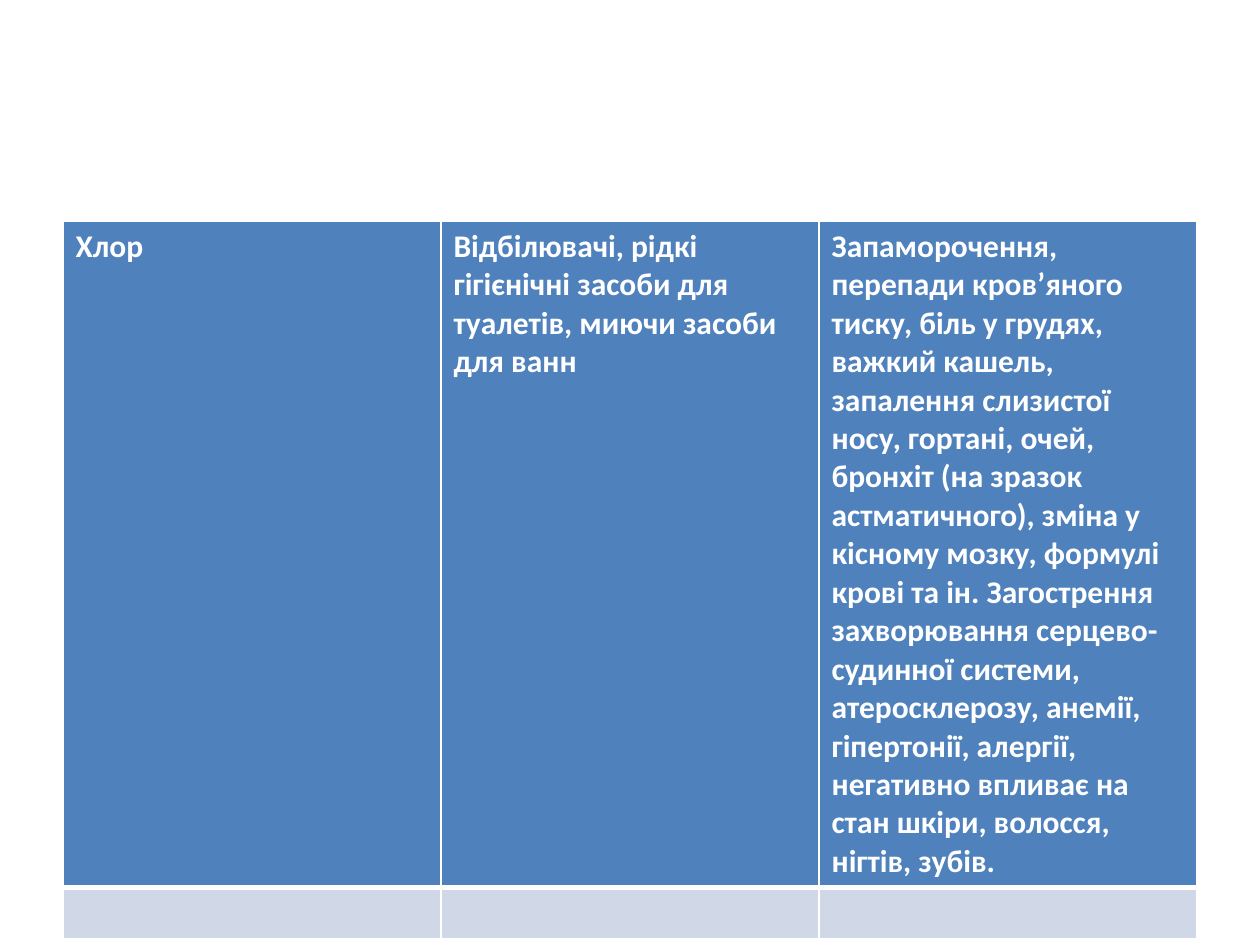
import pptx
import pptx.dml.color
import pptx.oxml
import pptx.oxml.ns
import pptx.util

PX = 914400 / 126
COLORS = {"header": "4F81BD", "band": "D0D8E8", "white": "FFFFFF"}
ROWS = [
    [
        "Хлор",
        "Відбілювачі, рідкі гігієнічні засоби для туалетів, миючи засоби для ванн",
        "Запаморочення, перепади кров’яного тиску, біль у грудях, важкий кашель, "
        "запалення слизистої носу, гортані, очей, бронхіт (на зразок астматичного), "
        "зміна у кісному мозку, формулі крові та ін. Загострення захворювання "
        "серцево-судинної системи, атеросклерозу, анемії, гіпертонії, алергії, "
        "негативно впливає на стан шкіри, волосся, нігтів, зубів.",
    ],
    ["", "", ""],
]


def px(length):
    return pptx.util.Emu(round(length * PX))


def rgb(name):
    return pptx.dml.color.RGBColor.from_string(COLORS[name])


def write_text(frame, text, size=18, bold=True, color="white", font="Calibri"):
    para = frame.paragraphs[0]
    para.font.size = pptx.util.Pt(size)
    if not text:
        return
    span = para.add_run()
    span.text = text
    span.font.size = pptx.util.Pt(size)
    span.font.bold = bold
    span.font.name = font
    span.font.color.rgb = rgb(color)


def set_borders(cell, top=1, bottom=1, color="white"):
    properties = cell._tc.get_or_add_tcPr()
    widths = {"lnL": 1, "lnR": 1, "lnT": top, "lnB": bottom}
    # Borders must come before the fill
    for index, (edge, width) in enumerate(widths.items()):
        line = pptx.oxml.parse_xml(
            f'<a:{edge} {pptx.oxml.ns.nsdecls("a")} w="{pptx.util.Pt(width)}">'
            f'<a:solidFill><a:srgbClr val="{COLORS[color]}"/></a:solidFill></a:{edge}>'
        )
        properties.insert(index, line)


def add_substance_table(page, left, top, width, height, row_height):
    frame = page.shapes.add_table(
        len(ROWS), len(ROWS[0]), px(left), px(top), px(width), px(height)
    )
    table = frame.table
    for column in table.columns:
        column.width = px(width / len(ROWS[0]))
    # Rows grow to fit their text
    for row in table.rows:
        row.height = px(row_height)
    frame.height = px(height)

    for row_index, texts in enumerate(ROWS):
        is_header = row_index == 0
        for column_index, text in enumerate(texts):
            cell = table.cell(row_index, column_index)
            cell.fill.solid()
            cell.fill.fore_color.rgb = rgb("header" if is_header else "band")
            # Thick rule between header and body
            set_borders(cell, top=1 if is_header else 3, bottom=3 if is_header else 1)
            write_text(cell.text_frame, text)


def main():
    deck = pptx.Presentation()
    deck.slide_width, deck.slide_height = px(1260), px(945)
    page = deck.slides.add_slide(deck.slide_layouts[6])
    add_substance_table(page, 63, 221, 1134, 707, row_height=51)
    deck.save("out.pptx")


if __name__ == "__main__":
    main()
